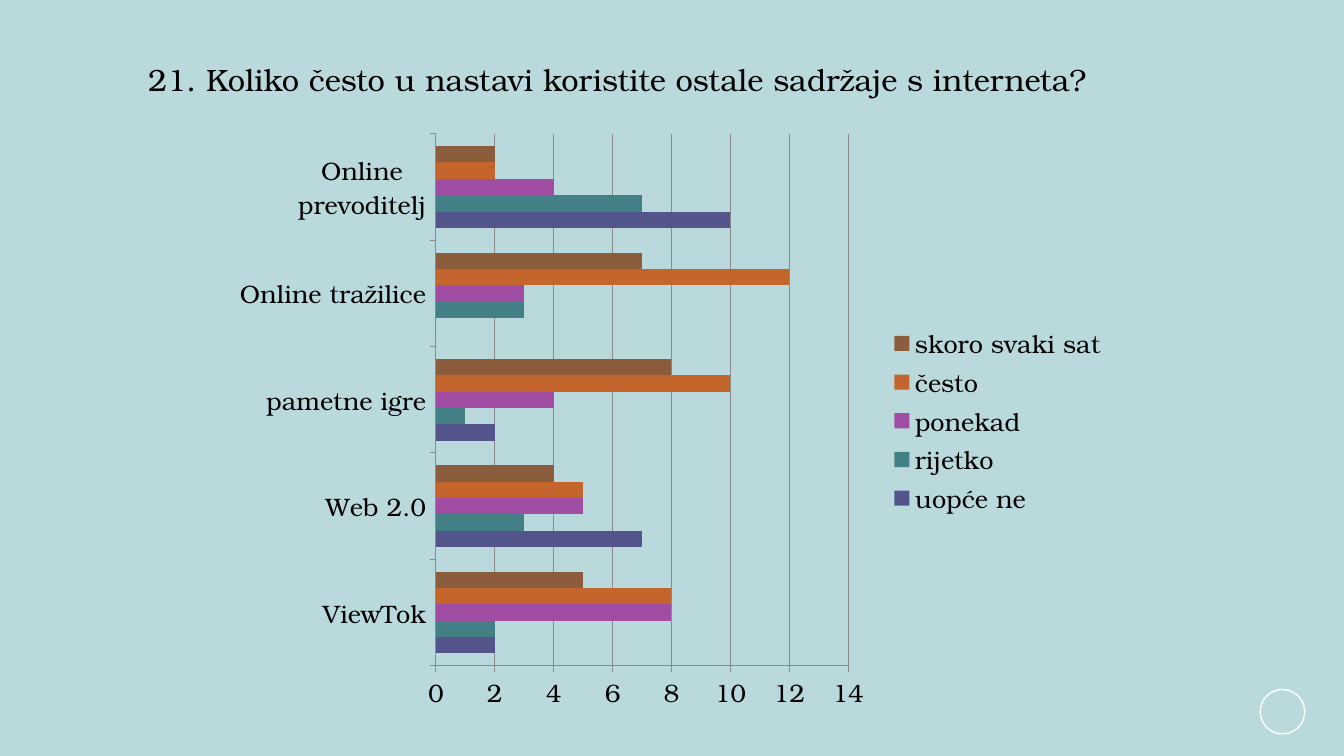
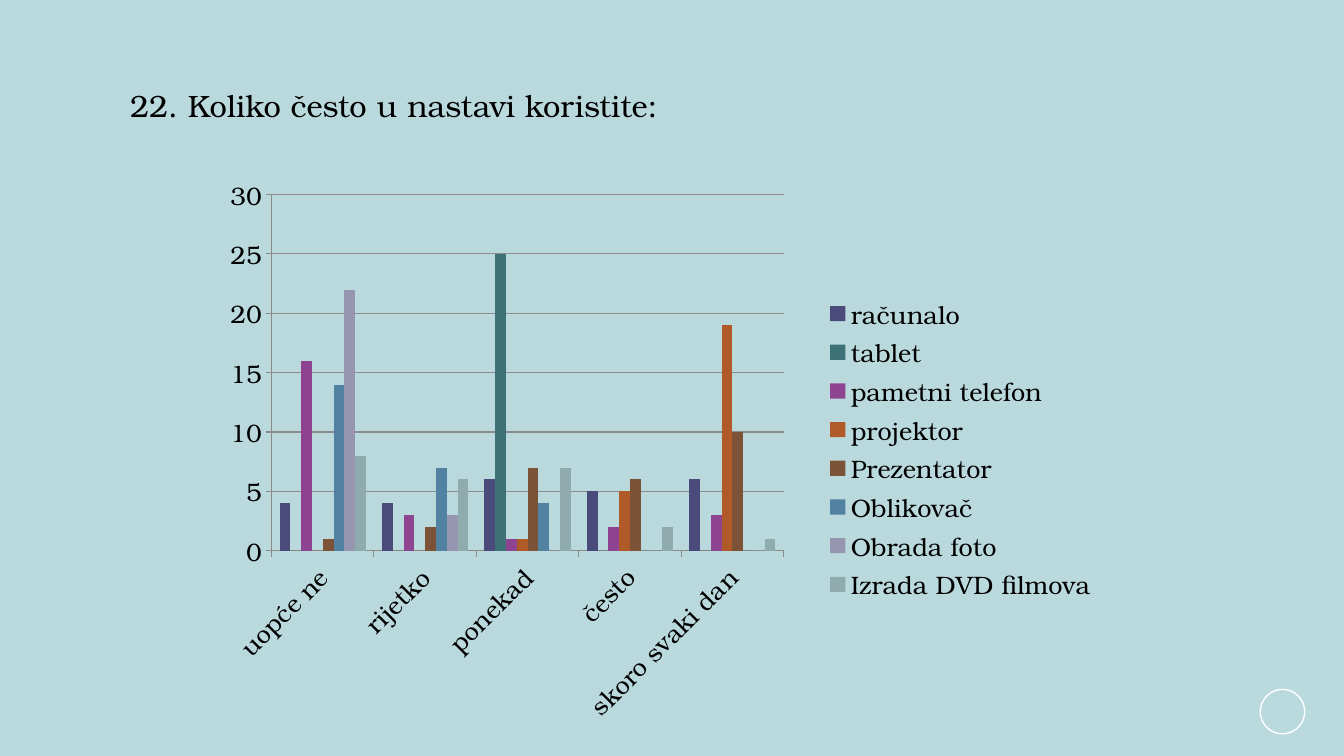
from lxml.etree import SubElement
from pptx import Presentation
from pptx.chart.data import CategoryChartData
from pptx.dml.color import RGBColor
from pptx.enum.chart import XL_CHART_TYPE as ChartType
from pptx.enum.chart import XL_LEGEND_POSITION as LegendPosition
from pptx.enum.chart import XL_TICK_MARK as TickMark
from pptx.enum.shapes import MSO_SHAPE as Shape
from pptx.enum.text import MSO_ANCHOR as Anchor
from pptx.enum.text import MSO_AUTO_SIZE as AutoSize
from pptx.enum.text import PP_ALIGN as Align
from pptx.oxml.ns import qn
from pptx.util import Inches, Pt

BACKGROUND = RGBColor(0xBA, 0xD9, 0xDD)
BLACK = RGBColor(0x00, 0x00, 0x00)
WHITE = RGBColor(0xFF, 0xFF, 0xFF)
GRID = RGBColor(0x8B, 0x8B, 0x8B)

INDIGO = RGBColor(0x53, 0x54, 0x8A)
TEAL = RGBColor(0x43, 0x80, 0x86)
PURPLE = RGBColor(0xA0, 0x4D, 0xA3)
ORANGE = RGBColor(0xC4, 0x65, 0x2D)
BROWN = RGBColor(0x8B, 0x5D, 0x3D)

DARK_INDIGO = RGBColor(0x4A, 0x4B, 0x7B)
DARK_TEAL = RGBColor(0x3C, 0x72, 0x78)
DARK_PURPLE = RGBColor(0x8F, 0x44, 0x92)
DARK_ORANGE = RGBColor(0xAF, 0x5A, 0x28)
DARK_BROWN = RGBColor(0x7C, 0x53, 0x36)
BLUE = RGBColor(0x52, 0x82, 0xA2)
PALE_INDIGO = RGBColor(0x96, 0x96, 0xB1)
PALE_TEAL = RGBColor(0x90, 0xAB, 0xAE)

FONT = "TeX Gyre Bonum"
TITLE_SIZE = Pt(22)
CHART_SIZE = Pt(18)
TITLE_ONLY = 5


class SurveyDeck:
    """Holds the shared style and the slide being built."""

    def __init__(self):
        self.deck = Presentation()
        self.deck.slide_width = Inches(13.33)
        self.deck.slide_height = Inches(7.5)
        fill = self.deck.slide_master.background.fill
        fill.solid()
        fill.fore_color.rgb = BACKGROUND
        self.page = None

    def add_page(self, title, left, top, width):
        layout = self.deck.slide_layouts[TITLE_ONLY]
        self.page = self.deck.slides.add_slide(layout)
        self.add_title(title, left, top, width)
        self.add_ring()

    def style_font(self, font, size):
        font.name = FONT
        font.size = size
        font.bold = False
        font.color.rgb = BLACK

    def add_title(self, text, left, top, width):
        box = self.page.shapes.title
        box.left, box.top = Inches(left), Inches(top)
        box.width, box.height = Inches(width), Inches(0.47)
        frame = box.text_frame
        frame.word_wrap = True
        frame.auto_size = AutoSize.NONE
        frame.vertical_anchor = Anchor.MIDDLE
        para = frame.paragraphs[0]
        para.alignment = Align.LEFT
        span = para.add_run()
        span.text = text
        self.style_font(span.font, TITLE_SIZE)

    def add_ring(self):
        ring = self.page.shapes.add_shape(
            Shape.OVAL, Inches(12.5), Inches(6.84), Inches(0.44), Inches(0.44))
        ring.shadow.inherit = False
        ring.fill.background()
        ring.line.color.rgb = WHITE
        ring.line.width = Pt(1)

    def add_chart(self, kind, place, plot_area, categories, series, maximum, step):
        """Add a clustered chart; series holds (name, values, colour) rows."""
        data = CategoryChartData(number_format="General")
        data.categories = categories
        for name, values, _ in series:
            data.add_series(name, values)
        frame = self.page.shapes.add_chart(kind, *map(Inches, place), data)
        chart = frame.chart
        chart.has_title = False
        self.style_font(chart.font, CHART_SIZE)

        plot = chart.plots[0]
        plot.gap_width = 150
        plot.overlap = 0
        plot.vary_by_categories = False
        for bars, (_, _, color) in zip(plot.series, series):
            bars.invert_if_negative = False
            bars.format.fill.solid()
            bars.format.fill.fore_color.rgb = color

        chart.has_legend = True
        chart.legend.position = LegendPosition.RIGHT
        chart.legend.include_in_layout = False
        self.style_font(chart.legend.font, CHART_SIZE)

        for axis in (chart.category_axis, chart.value_axis):
            axis.major_tick_mark = TickMark.OUTSIDE
            axis.minor_tick_mark = TickMark.NONE
            self.style_line(axis.format.line)
            self.style_font(axis.tick_labels.font, CHART_SIZE)
        value_axis = chart.value_axis
        value_axis.minimum_scale = 0
        value_axis.maximum_scale = maximum
        value_axis.major_unit = step
        value_axis.has_major_gridlines = True
        self.style_line(value_axis.major_gridlines.format.line)
        self.place_plot(chart, plot_area)
        return chart

    def style_line(self, line):
        line.color.rgb = GRID
        line.width = Pt(0.75)

    def place_plot(self, chart, plot_area):
        """Fix the inner plot area, given as shares of the chart size."""
        area = chart.plots[0]._element.getparent()
        for old in area.findall(qn("c:layout")):
            area.remove(old)
        layout = SubElement(area, qn("c:layout"))
        area.insert(0, layout)
        manual = SubElement(layout, qn("c:manualLayout"))
        settings = [("layoutTarget", "inner"), ("xMode", "edge"), ("yMode", "edge")]
        settings += zip("xywh", map(str, plot_area))
        for tag, value in settings:
            SubElement(manual, qn(f"c:{tag}")).set("val", value)

    def slant_categories(self, chart, degrees):
        labels = chart.category_axis._element.find(qn("c:txPr"))
        labels.find(qn("a:bodyPr")).set("rot", str(degrees * 60000))

    def save(self):
        self.deck.save("out.pptx")


def main():
    survey = SurveyDeck()

    survey.add_page(
        "21. Koliko često u nastavi koristite ostale sadržaje s interneta?",
        1.37, 0.55, 9.95)
    survey.add_chart(
        ChartType.BAR_CLUSTERED,
        place=(2.19, 1.21, 8.89, 5.93),
        plot_area=(0.24, 0.02, 0.46, 0.89),
        categories=["ViewTok", "Web 2.0", "pametne igre",
                    "Online tražilice", "Online prevoditelj"],
        series=[
            ("uopće ne", (2, 7, 2, 0, 10), INDIGO),
            ("rijetko", (2, 3, 1, 3, 7), TEAL),
            ("ponekad", (8, 5, 4, 3, 4), PURPLE),
            ("često", (8, 5, 10, 12, 2), ORANGE),
            ("skoro svaki sat", (5, 4, 8, 7, 2), BROWN),
        ],
        maximum=14, step=2)

    survey.add_page("22. Koliko često u nastavi koristite:", 1.19, 0.81, 10.95)
    usage = survey.add_chart(
        ChartType.COLUMN_CLUSTERED,
        place=(2.07, 1.65, 8.91, 5.61),
        plot_area=(0.07, 0.05, 0.57, 0.63),
        categories=["uopće ne", "rijetko", "ponekad", "često", "skoro svaki dan"],
        series=[
            ("računalo", (4, 4, 6, 5, 6), DARK_INDIGO),
            ("tablet", (0, 0, 25, 0, 0), DARK_TEAL),
            ("pametni telefon", (16, 3, 1, 2, 3), DARK_PURPLE),
            ("projektor", (0, 0, 1, 5, 19), DARK_ORANGE),
            ("Prezentator", (1, 2, 7, 6, 10), DARK_BROWN),
            ("Oblikovač", (14, 7, 4, 0, 0), BLUE),
            ("Obrada foto", (22, 3, 0, 0, 0), PALE_INDIGO),
            ("Izrada DVD filmova", (8, 6, 7, 2, 1), PALE_TEAL),
        ],
        maximum=30, step=5)
    survey.slant_categories(usage, -45)

    survey.save()


if __name__ == "__main__":
    main()
